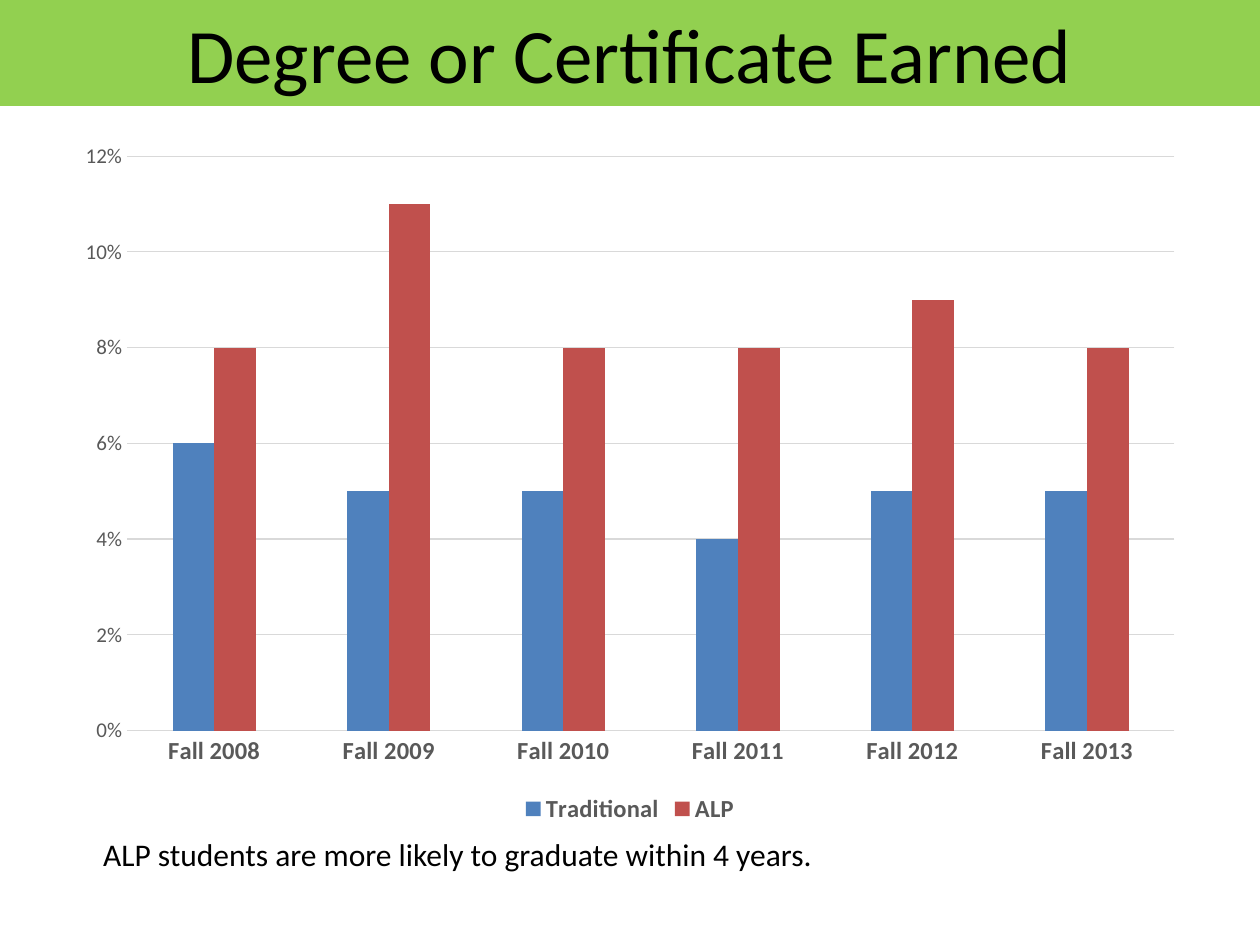
from dataclasses import dataclass

from pptx import Presentation
from pptx.chart.data import CategoryChartData
from pptx.dml.color import RGBColor
from pptx.enum.chart import XL_CHART_TYPE, XL_LEGEND_POSITION, XL_TICK_MARK
from pptx.enum.shapes import MSO_SHAPE
from pptx.enum.text import MSO_ANCHOR, PP_ALIGN
from pptx.util import Inches, Pt

COLUMNS = XL_CHART_TYPE.COLUMN_CLUSTERED
LEGEND_BOTTOM = XL_LEGEND_POSITION.BOTTOM
NO_TICK = XL_TICK_MARK.NONE
RECTANGLE = MSO_SHAPE.RECTANGLE
MIDDLE, TOP = MSO_ANCHOR.MIDDLE, MSO_ANCHOR.TOP
CENTER, LEFT = PP_ALIGN.CENTER, PP_ALIGN.LEFT


@dataclass(frozen=True)
class Theme:
    font: str = "Calibri"
    ink: str = "000000"
    muted: str = "595959"
    rule: str = "D9D9D9"
    banner: str = "92D050"
    series: tuple = ("4F81BD", "C0504D")
    title_size: int = 44
    note_size: int = 18
    label_size: int = 14
    scale_size: int = 12
    chart_size: int = 10
    rule_width: float = 0.75


class SlideBuilder:
    def __init__(self, slide, theme):
        self.slide = slide
        self.theme = theme

    def style_font(self, font, size, color, bold=False):
        font.name = self.theme.font
        font.size = Pt(size)
        font.bold = bold
        font.color.rgb = RGBColor.from_string(color)

    def style_rule(self, line):
        line.color.rgb = RGBColor.from_string(self.theme.rule)
        line.width = Pt(self.theme.rule_width)

    def set_text(self, frame, text, size, align, anchor):
        frame.word_wrap = True
        frame.vertical_anchor = anchor
        paragraph = frame.paragraphs[0]
        paragraph.alignment = align
        run = paragraph.add_run()
        run.text = text
        self.style_font(run.font, size, self.theme.ink)

    def banner(self, text, box):
        banner = self.slide.shapes.add_shape(RECTANGLE, *map(Inches, box))
        banner.shadow.inherit = False
        banner.fill.solid()
        banner.fill.fore_color.rgb = RGBColor.from_string(self.theme.banner)
        banner.line.fill.background()
        self.set_text(banner.text_frame, text, self.theme.title_size, CENTER, MIDDLE)

    def note(self, text, box):
        note = self.slide.shapes.add_textbox(*map(Inches, box))
        self.set_text(note.text_frame, text, self.theme.note_size, LEFT, TOP)

    def column_chart(self, categories, series, box, top, step):
        theme = self.theme
        data = CategoryChartData(number_format="0%")
        data.categories = categories
        for name, values in series.items():
            data.add_series(name, values)
        chart = self.slide.shapes.add_chart(COLUMNS, *map(Inches, box), data).chart
        self.style_font(chart.font, theme.chart_size, theme.ink)
        chart.has_title = False

        plot = chart.plots[0]
        plot.vary_by_categories = False
        plot.gap_width = 219
        plot.overlap = 0
        for columns, color in zip(plot.series, theme.series):
            columns.format.fill.solid()
            columns.format.fill.fore_color.rgb = RGBColor.from_string(color)
            columns.invert_if_negative = False

        terms = chart.category_axis
        self.style_font(terms.tick_labels.font, theme.label_size, theme.muted, True)
        self.style_rule(terms.format.line)

        rates = chart.value_axis
        rates.minimum_scale = 0
        rates.maximum_scale = top
        rates.major_unit = step
        rates.tick_labels.number_format = "0%"
        rates.tick_labels.number_format_is_linked = False
        self.style_font(rates.tick_labels.font, theme.scale_size, theme.muted)
        rates.format.line.fill.background()
        rates.has_major_gridlines = True
        self.style_rule(rates.major_gridlines.format.line)

        for axis in (terms, rates):
            axis.major_tick_mark = NO_TICK
            axis.minor_tick_mark = NO_TICK

        chart.has_legend = True
        chart.legend.position = LEGEND_BOTTOM
        chart.legend.include_in_layout = False
        self.style_font(chart.legend.font, theme.label_size, theme.muted, True)


def main():
    deck = Presentation()
    deck.slide_width = Inches(10)
    deck.slide_height = Inches(7.5)
    builder = SlideBuilder(deck.slides.add_slide(deck.slide_layouts[6]), Theme())

    builder.banner("Degree or Certificate Earned", (0, 0, 10, 0.84))
    builder.column_chart(
        [f"Fall {year}" for year in range(2008, 2014)],
        {
            "Traditional": (0.06, 0.05, 0.05, 0.04, 0.05, 0.05),
            "ALP": (0.08, 0.11, 0.08, 0.08, 0.09, 0.08),
        },
        (0.5, 1.03, 9, 5.55),
        top=0.12,
        step=0.02,
    )
    builder.note(
        "ALP students are more likely to graduate within 4 years.",
        (0.72, 6.58, 8.87, 0.4),
    )
    deck.save("out.pptx")


if __name__ == "__main__":
    main()
